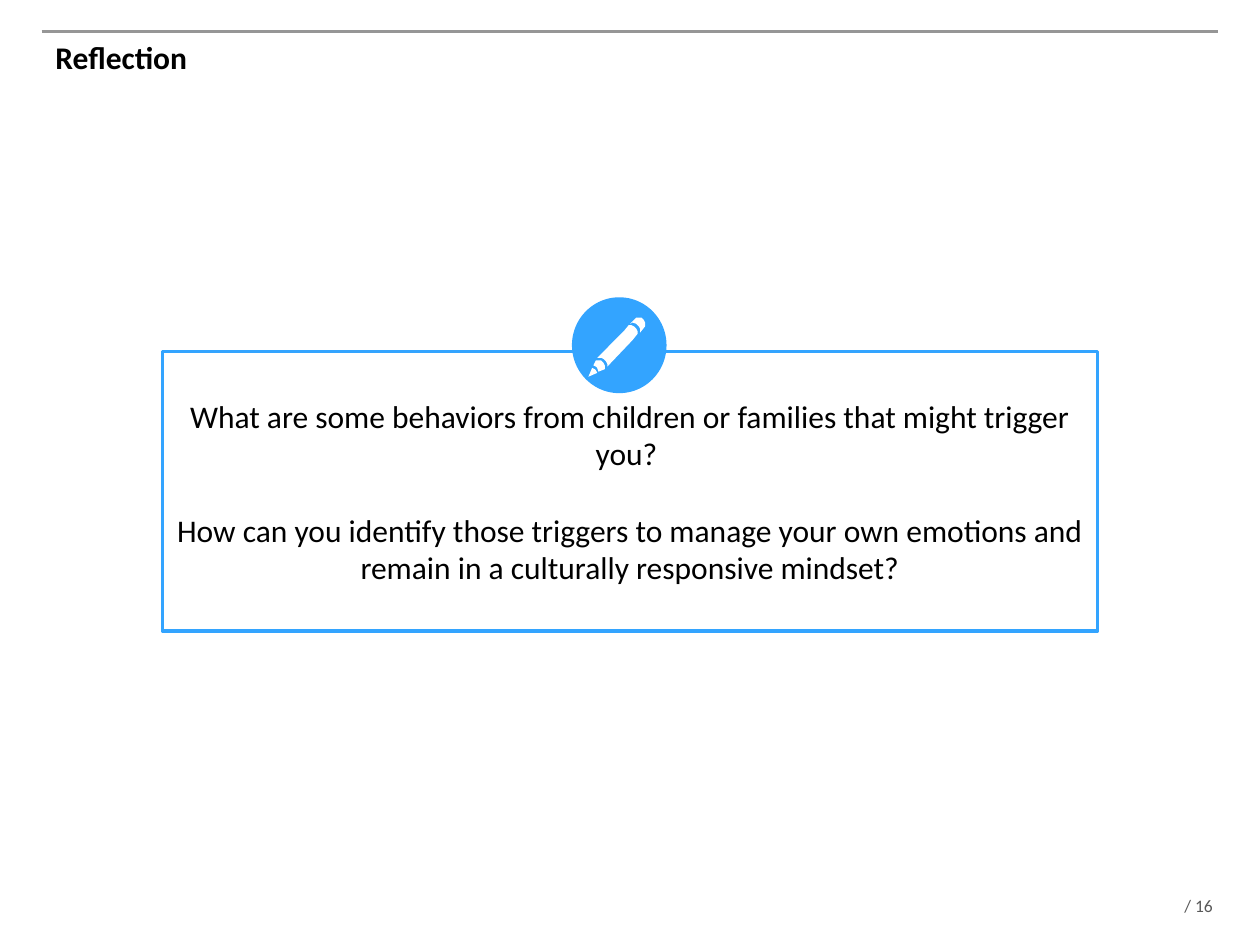
from lxml import etree
from pptx import Presentation
from pptx.dml.color import RGBColor
from pptx.enum.shapes import MSO_CONNECTOR, MSO_SHAPE
from pptx.enum.text import MSO_ANCHOR, PP_ALIGN
from pptx.oxml.ns import qn
from pptx.util import Inches, Pt

STRAIGHT = MSO_CONNECTOR.STRAIGHT
RECTANGLE, OVAL = MSO_SHAPE.RECTANGLE, MSO_SHAPE.OVAL
TOP, MIDDLE = MSO_ANCHOR.TOP, MSO_ANCHOR.MIDDLE
LEFT, CENTER = PP_ALIGN.LEFT, PP_ALIGN.CENTER

FONT = "Calibri"
COLORS = {"accent": "33A4FF", "white": "FFFFFF", "text": "000000",
          "rule": "969696", "footer": "595959"}

QUESTIONS = [
    "What are some behaviors from children or families that might trigger you? ",
    "How can you identify those triggers to manage your own emotions and "
    "remain in a culturally responsive mindset?",
]

# Pencil outlines in inches on the slide, from the tip to the eraser
PENCIL_PARTS = [
    [(4.70, 2.92), (4.67, 2.99), (4.74, 2.96), (4.73, 2.94), (4.72, 2.93)],
    [(4.75, 2.95), (4.80, 2.93), (4.80, 2.90), (4.79, 2.88), (4.77, 2.86),
     (4.75, 2.86), (4.73, 2.86), (4.71, 2.90), (4.73, 2.91), (4.74, 2.92)],
    [(5.06, 2.63), (5.05, 2.61), (5.03, 2.59), (5.01, 2.58), (4.99, 2.58),
     (4.95, 2.63), (4.74, 2.84), (4.77, 2.84), (4.79, 2.85), (4.81, 2.87),
     (4.82, 2.89), (4.82, 2.91), (5.02, 2.70), (5.06, 2.65)],
    [(5.00, 2.57), (5.02, 2.56), (5.05, 2.57), (5.07, 2.59), (5.08, 2.61),
     (5.08, 2.64), (5.12, 2.59), (5.12, 2.56), (5.11, 2.54), (5.09, 2.52),
     (5.07, 2.52), (5.05, 2.52)],
]


def color(name):
    return RGBColor.from_string(COLORS[name])


def style_paragraph(paragraph, size, color_name, align, bold=False):
    paragraph.alignment = align
    for run in paragraph.runs:
        font = run.font
        font.name, font.size, font.bold = FONT, Pt(size), bold
        font.color.rgb = color(color_name)


def paint(shape, fill, line=None, width=0):
    shape.shadow.inherit = False
    shape.fill.solid()
    shape.fill.fore_color.rgb = color(fill)
    if line:
        shape.line.color.rgb = color(line)
        shape.line.width = Pt(width)
    else:
        shape.line.fill.background()


def set_title(slide, text):
    title = slide.shapes.title
    title.left, title.top = Inches(0.34), Inches(0.25)
    title.width, title.height = Inches(9.32), Inches(0.92)
    title.text_frame.text = text
    title.text_frame.vertical_anchor = TOP
    style_paragraph(title.text_frame.paragraphs[0], 18, "text", LEFT, bold=True)


def add_header_rule(slide):
    y = Inches(0.25)
    rule = slide.shapes.add_connector(STRAIGHT, Inches(0.33), y, Inches(9.67), y)
    rule.line.color.rgb = color("rule")
    rule.line.width = Pt(2)
    etree.SubElement(rule._element.spPr, qn("a:effectLst"))


def add_page_total(slide, text):
    box = slide.shapes.add_textbox(Inches(9.4), Inches(7.1), Inches(0.6), Inches(0.17))
    frame = box.text_frame
    frame.margin_left = frame.margin_right = 0
    frame.margin_top = frame.margin_bottom = 0
    frame.text = text
    style_paragraph(frame.paragraphs[0], 10, "footer", LEFT)


def add_question_box(slide, questions):
    box = slide.shapes.add_shape(
        RECTANGLE, Inches(1.29), Inches(2.79), Inches(7.42), Inches(2.22))
    paint(box, "white", "accent", 2)
    frame = box.text_frame
    frame.word_wrap = True
    frame.vertical_anchor = MIDDLE
    frame.text = "\n".join(questions)
    for paragraph in frame.paragraphs:
        style_paragraph(paragraph, 18, "text", CENTER)
    for paragraph in frame.paragraphs[1:]:
        paragraph.space_before = Pt(22)


def add_pencil_badge(slide):
    badge = slide.shapes.add_shape(
        OVAL, Inches(4.55), Inches(2.37), Inches(0.73), Inches(0.74))
    paint(badge, "accent", "accent", 1.5)
    for outline in PENCIL_PARTS:
        start, *others = [(Inches(x), Inches(y)) for x, y in outline]
        builder = slide.shapes.build_freeform(*start)
        builder.add_line_segments(others, close=True)
        paint(builder.convert_to_shape(), "white")


def main():
    prs = Presentation()
    prs.slide_width, prs.slide_height = Inches(10), Inches(7.5)
    slide = prs.slides.add_slide(prs.slide_layouts[5])
    add_page_total(slide, "/ 16")
    add_header_rule(slide)
    set_title(slide, "Reflection")
    add_question_box(slide, QUESTIONS)
    add_pencil_badge(slide)
    prs.save("out.pptx")


if __name__ == "__main__":
    main()
